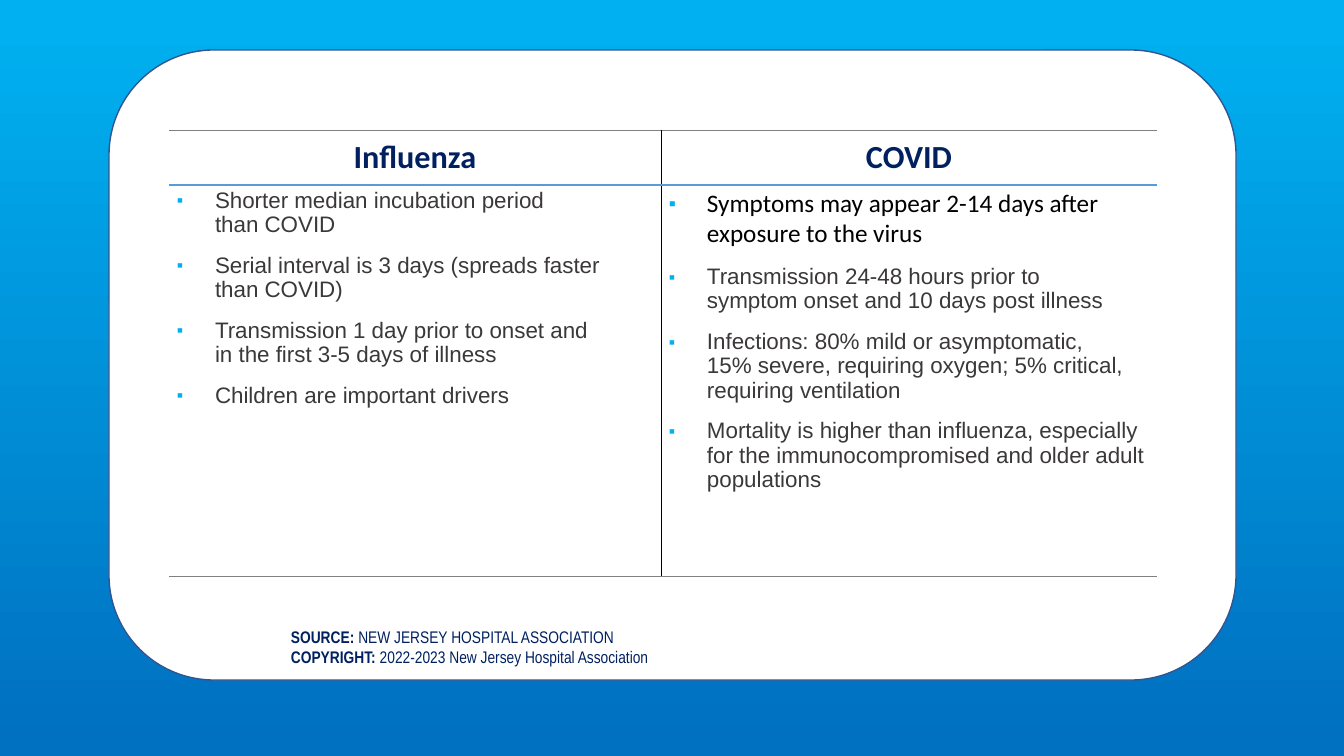
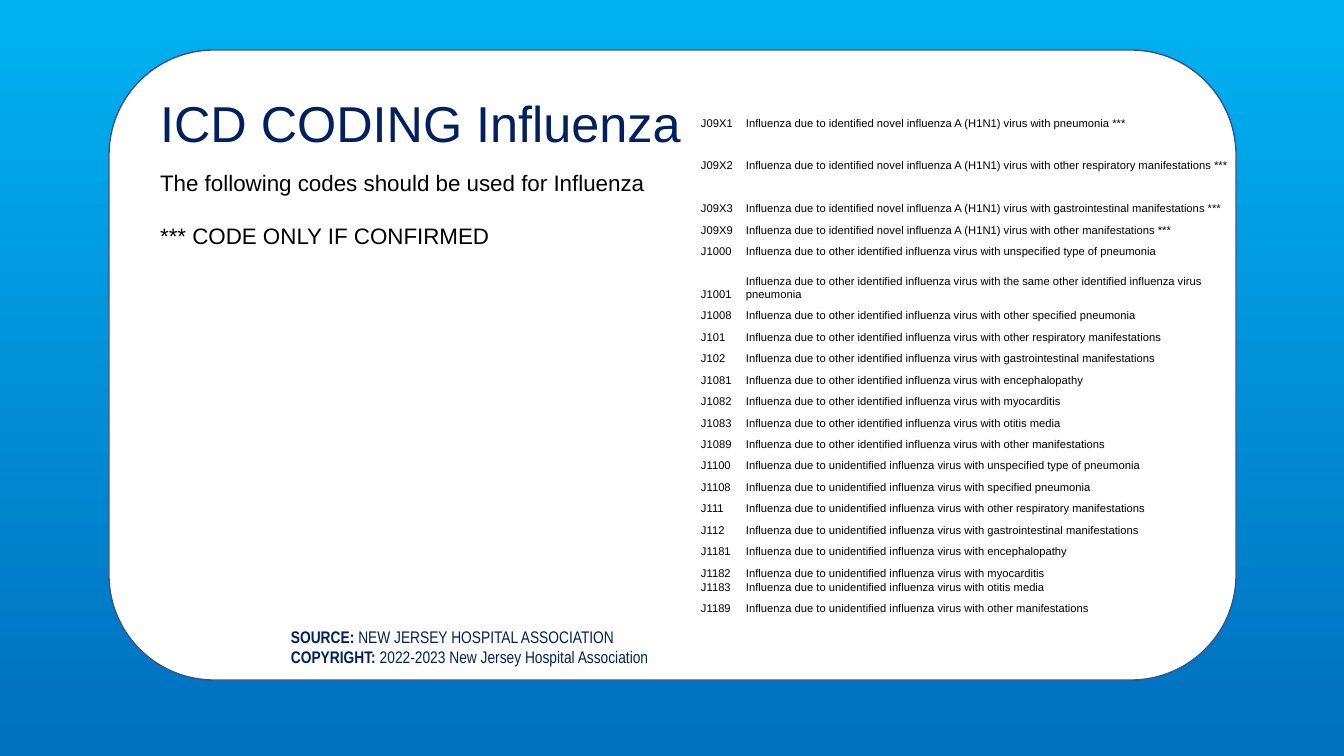
from copy import deepcopy

from lxml import etree
from pptx import Presentation
from pptx.dml.color import RGBColor
from pptx.enum.shapes import MSO_SHAPE
from pptx.enum.text import MSO_ANCHOR as ANCHOR, MSO_AUTO_SIZE as AUTO, PP_ALIGN as ALIGN
from pptx.oxml.ns import qn
from pptx.util import Emu, Pt

COLORS = {
    "sky": "00B0F0", "ocean": "0070C0", "white": "FFFFFF", "outline": "325491",
    "navy": "002060", "blue": "5B9BD5", "gray": "808080", "dark": "3B3838", "black": "000000",
}
FORMATS = {
    "source": {"name": "Arial Narrow", "size": 12, "color": "navy"},
    "label": {"name": "Arial Narrow", "size": 12, "color": "navy", "bold": True},
    "title": {"name": "Arial", "size": 36, "color": "navy"},
    "body": {"name": "Arial", "size": 16, "color": "black"},
    "header": {"name": "Calibri", "size": 23, "color": "navy", "bold": True},
    "point": {"name": "Arial", "size": 16, "color": "dark"},
    "lead": {"name": "Calibri", "size": 18, "color": "black"},
    "code": {"name": "Arial", "size": 8, "color": "black"},
}
SOURCE = [
    ("SOURCE: ", "NEW JERSEY HOSPITAL ASSOCIATION"),
    ("COPYRIGHT: ", "2022-2023 New Jersey Hospital Association"),
]
COMPARISON = [
    ("Influenza", [
        ("Shorter median incubation period\nthan COVID", "point"),
        ("Serial interval is 3 days (spreads faster\nthan COVID)", "point"),
        ("Transmission 1 day prior to onset and\nin the first 3-5 days of illness", "point"),
        ("Children are important drivers", "point"),
    ]),
    ("COVID", [
        ("Symptoms may appear 2-14 days after exposure to the virus", "lead"),
        ("Transmission 24-48 hours prior to\nsymptom onset and 10 days post illness", "point"),
        ("Infections: 80% mild or asymptomatic,\n"
         "15% severe, requiring oxygen; 5% critical, requiring ventilation", "point"),
        ("Mortality is higher than influenza, especially for the immunocompromised "
         "and older adult populations", "point"),
    ]),
]
TITLE = "ICD CODING Influenza"
BODY = ["The following codes should be used for Influenza", "*** CODE ONLY IF CONFIRMED"]
CODE_GROUPS = [
    ("identified novel influenza A (H1N1) virus with ", " ***", [
        ("J09X1", "pneumonia"),
        ("J09X2", "other respiratory manifestations"),
        ("J09X3", "gastrointestinal manifestations"),
        ("J09X9", "other manifestations"),
    ]),
    ("other identified influenza virus with ", "", [
        ("J1000", "unspecified type of pneumonia"),
        ("J1001", "the same other identified influenza virus pneumonia"),
        ("J1008", "other specified pneumonia"),
        ("J101", "other respiratory manifestations"),
        ("J102", "gastrointestinal manifestations"),
        ("J1081", "encephalopathy"),
        ("J1082", "myocarditis"),
        ("J1083", "otitis media"),
        ("J1089", "other manifestations"),
    ]),
    ("unidentified influenza virus with ", "", [
        ("J1100", "unspecified type of pneumonia"),
        ("J1108", "specified pneumonia"),
        ("J111", "other respiratory manifestations"),
        ("J112", "gastrointestinal manifestations"),
        ("J1181", "encephalopathy"),
        ("J1182", "myocarditis"),
        ("J1183", "otitis media"),
        ("J1189", "other manifestations"),
    ]),
]
DOUBLE_ROWS = {"J09X2", "J09X3", "J1001"}
TIGHT_ROWS = {"J1183"}
TIGHT_HEIGHT = 14
CODES_HEIGHT = 507

WIDTH, HEIGHT = 1344, 756
SCALE = 12192000 / WIDTH


def px(value):
    return Emu(round(value * SCALE))


def box(*values):
    return [px(v) for v in values]


def rgb(name):
    return RGBColor.from_string(COLORS[name])


def add_run(p, text, style):
    r = p.add_run()
    r.text = text
    for key, value in FORMATS[style].items():
        if key == "color":
            r.font.color.rgb = rgb(value)
        else:
            setattr(r.font, key, Pt(value) if key == "size" else value)
    return r


def write(p, text, style, **paragraph):
    for i, line in enumerate(text.split("\n")):
        if i:
            p.add_line_break()
        r = add_run(p, line, style)
    for br in p._p.findall(qn("a:br")):
        br.append(deepcopy(r._r.rPr))
    for key, value in paragraph.items():
        setattr(p, key, value)


def paragraphs(tf, items):
    for i, item in enumerate(items):
        yield (tf.add_paragraph() if i else tf.paragraphs[0]), i, item


def set_bullet(p):
    pPr = p._p.get_or_add_pPr()
    pPr.set("marL", str(px(38)))
    pPr.set("indent", str(-px(38)))
    clr = etree.SubElement(pPr, qn("a:buClr"))
    etree.SubElement(clr, qn("a:srgbClr"), val=COLORS["sky"])
    etree.SubElement(pPr, qn("a:buSzPct"), val="80000")
    etree.SubElement(pPr, qn("a:buFont"), typeface="Arial")
    etree.SubElement(pPr, qn("a:buChar"), char="▪")


def clear_bullet(p):
    pPr = p._p.get_or_add_pPr()
    pPr.set("marL", "0")
    pPr.set("indent", "0")
    etree.SubElement(pPr, qn("a:buNone"))


def set_borders(cell, borders):
    tcPr = cell._tc.get_or_add_tcPr()
    for side in "LRTB":
        color, width = borders.get(side, (None, 0))
        ln = etree.SubElement(tcPr, qn(f"a:ln{side}"), w=str(Pt(width)))
        if color:
            fill = etree.SubElement(ln, qn("a:solidFill"))
            etree.SubElement(fill, qn("a:srgbClr"), val=COLORS[color])
        else:
            etree.SubElement(ln, qn("a:noFill"))


def add_table(s, left, top, widths, heights):
    tbl = s.shapes.add_table(len(heights), len(widths),
                             *box(left, top, sum(widths), sum(heights))).table
    tbl.first_row = tbl.horz_banding = False
    for lines, sizes, attr in ((tbl.columns, widths, "width"), (tbl.rows, heights, "height")):
        for line, size in zip(lines, sizes):
            setattr(line, attr, px(size))
    return tbl


def set_cell(cell, borders, margins, anchor):
    set_borders(cell, borders)
    cell.fill.background()
    cell.vertical_anchor = anchor
    for side, value in zip(("left", "top", "right", "bottom"), margins):
        setattr(cell, f"margin_{side}", px(value))


def set_background(master):
    fill = master.background.fill
    fill.gradient()
    fill.gradient_angle = 270
    for stop, color, position in zip(fill.gradient_stops, ("sky", "ocean"), (0.03, 0.99)):
        stop.color.rgb = rgb(color)
        stop.position = position


def add_slide(prs, layout):
    s = prs.slides.add_slide(prs.slide_layouts.get_by_name(layout))
    panel = s.shapes.add_shape(MSO_SHAPE.ROUNDED_RECTANGLE, *box(109, 50, 1127, 630))
    panel.shadow.inherit = False
    panel.fill.solid()
    panel.fill.fore_color.rgb = rgb("white")
    panel.line.color.rgb = rgb("outline")
    panel.line.width = Pt(1)
    s.shapes._spTree.insert(2, panel._element)
    tf = s.shapes.add_textbox(*box(281, 622, 468, 50)).text_frame
    tf.word_wrap = True
    for p, _, (label, text) in paragraphs(tf, SOURCE):
        add_run(p, label, "label")
        add_run(p, text, "source")
    return s


def build_comparison(prs):
    s = add_slide(prs, "Blank")
    tbl = add_table(s, 169, 130, [492, 496], [55, 392])
    for col, (heading, points) in enumerate(COMPARISON):
        divider = {"L" if col else "R": ("black", 0.75)}
        rule = ("blue", 1.5)
        header, content = tbl.cell(0, col), tbl.cell(1, col)
        set_cell(header, {**divider, "T": ("gray", 0.75), "B": rule}, (8, 4, 8, 4), ANCHOR.MIDDLE)
        set_cell(content, {**divider, "T": rule, "B": ("gray", 0.75)}, (8, 4, 8, 4), ANCHOR.TOP)
        write(header.text_frame.paragraphs[0], heading, "header", alignment=ALIGN.CENTER)
        for p, i, (text, style) in paragraphs(content.text_frame, points):
            set_bullet(p)
            write(p, text, style, line_spacing=0.97, space_before=Pt(12 if i else 0))


def build_codes(prs):
    s = add_slide(prs, "Title and Content")
    title, body = s.placeholders
    for sp, area, anchor in ((title, (150, 98, 550, 56), ANCHOR.MIDDLE),
                             (body, (150, 164, 519, 92), ANCHOR.TOP)):
        sp.left, sp.top, sp.width, sp.height = box(*area)
        tf = sp.text_frame
        tf.word_wrap, tf.auto_size, tf.vertical_anchor = True, AUTO.NONE, anchor
    write(title.text_frame.paragraphs[0], TITLE, "title", alignment=ALIGN.LEFT, line_spacing=0.9)
    for p, i, text in paragraphs(body.text_frame, BODY):
        clear_bullet(p)
        write(p, text, "body", space_before=Pt(19 if i else 0))

    rows = [(code, f"Influenza due to {virus}{effect}{mark}")
            for virus, mark, effects in CODE_GROUPS for code, effect in effects]
    units = [0 if code in TIGHT_ROWS else 2 if code in DOUBLE_ROWS else 1 for code, _ in rows]
    unit = (CODES_HEIGHT - TIGHT_HEIGHT) / sum(units)
    tbl = add_table(s, 700, 108, [45, 489], [n * unit or TIGHT_HEIGHT for n in units])
    for r, row in enumerate(rows):
        for c, text in enumerate(row):
            cell = tbl.cell(r, c)
            set_cell(cell, {}, (1, 1, 1, 0), ANCHOR.BOTTOM)
            write(cell.text_frame.paragraphs[0], text, "code")


def main():
    prs = Presentation()
    prs.slide_width, prs.slide_height = box(WIDTH, HEIGHT)
    set_background(prs.slide_master)
    build_comparison(prs)
    build_codes(prs)
    prs.save("out.pptx")


if __name__ == "__main__":
    main()
